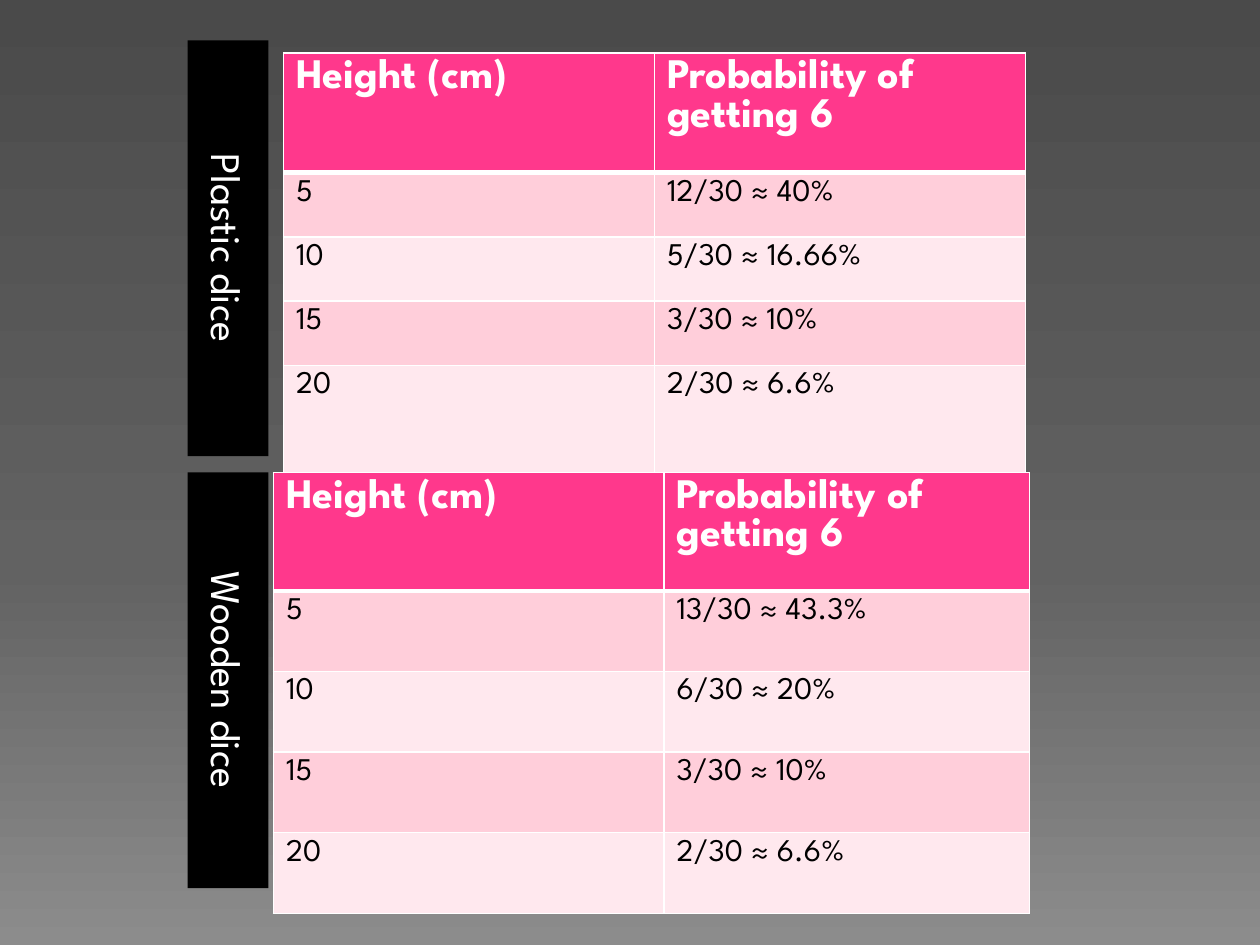
import pptx
import pptx.dml.color
import pptx.enum.shapes
import pptx.enum.text
import pptx.oxml
import pptx.oxml.ns
import pptx.util

Inches, Pt = pptx.util.Inches, pptx.util.Pt
RGB = pptx.dml.color.RGBColor

FONT = "League Spartan"
WHITE = RGB(0xFF, 0xFF, 0xFF)
BLACK = RGB(0, 0, 0)
PINK = RGB(0xFF, 0x38, 0x8C)
BANDS = [RGB(0xFF, 0xCE, 0xDA), RGB(0xFF, 0xE8, 0xEE)]
STOPS = [(0, "4A4A4A"), (60, "626262"), (100, "8C8C8C")]

HEAD = ("Height (cm)", "Probability of getting 6")
DICE = [
    dict(name="Plastic dice", top=0.32, left=2.25, table_top=0.42,
         cols=[2.945, 2.945], rows=[0.95, 0.51, 0.51, 0.51, 0.86],
         data=[("5", "12/30 ≈ 40%"), ("10", "5/30 ≈ 16.66%"),
               ("15", "3/30 ≈ 10%"), ("20", "2/30 ≈ 6.6%")]),
    dict(name="Wooden dice", top=3.75, left=2.17, table_top=3.75,
         cols=[3.1, 2.9], rows=[0.94] + [0.64] * 4,
         data=[("5", "13/30 ≈ 43.3%"), ("10", "6/30 ≈ 20%"),
               ("15", "3/30 ≈ 10%"), ("20", "2/30 ≈ 6.6%")]),
]


def write(frame, text, size=18, color=BLACK, bold=False, align=None):
    para = frame.paragraphs[0]
    para.alignment = align
    run = para.add_run()
    run.text = text
    run.font.name = FONT
    run.font.size = Pt(size)
    run.font.bold = bold
    run.font.color.rgb = color
    return para


def set_back(slide):
    """Give the slide a vertical grey gradient."""
    fill = slide.background.fill
    fill.gradient()
    fill.gradient_angle = 270
    stops = slide.element.find(".//" + pptx.oxml.ns.qn("a:gsLst"))
    for old in list(stops):
        stops.remove(old)
    for pos, color in STOPS:
        stops.append(pptx.oxml.parse_xml(
            f'<a:gs {pptx.oxml.ns.nsdecls("a")} pos="{pos * 1000}">'
            f'<a:srgbClr val="{color}"/></a:gs>'))


def add_edges(cell, row):
    """Draw white borders, thick between header and body."""
    thick = {0: "B", 1: "T"}.get(row)
    for side in "LRTB":
        width = Pt(3 if side == thick else 1)
        cell._tc.get_or_add_tcPr().append(pptx.oxml.parse_xml(
            f'<a:ln{side} {pptx.oxml.ns.nsdecls("a")} w="{width}">'
            f'<a:solidFill><a:srgbClr val="{WHITE}"/></a:solidFill>'
            f'</a:ln{side}>'))


def add_label(slide, name, top):
    box = slide.shapes.add_shape(
        pptx.enum.shapes.MSO_SHAPE.RECTANGLE,
        Inches(1.49), Inches(top), Inches(0.64), Inches(3.3))
    box.shadow.inherit = False
    box.fill.solid()
    box.fill.fore_color.rgb = BLACK
    box.line.fill.background()
    frame = box.text_frame
    frame.word_wrap = True
    frame.vertical_anchor = pptx.enum.text.MSO_ANCHOR.MIDDLE
    frame._txBody.bodyPr.set("vert", "vert")
    para = write(frame, name, size=24, color=WHITE,
                 align=pptx.enum.text.PP_ALIGN.CENTER)
    para.space_before = Pt(4.8)


def add_grid(slide, left, top, cols, rows, data):
    table = slide.shapes.add_table(
        len(rows), len(cols), Inches(left), Inches(top),
        Inches(sum(cols)), Inches(sum(rows))).table
    for col, width in zip(table.columns, cols):
        col.width = Inches(width)
    for row, height in zip(table.rows, rows):
        row.height = Inches(height)
    for r, texts in enumerate([HEAD] + data):
        for c, text in enumerate(texts):
            cell = table.cell(r, c)
            add_edges(cell, r)
            cell.fill.solid()
            if r == 0:
                cell.fill.fore_color.rgb = PINK
                write(cell.text_frame, text, size=24, color=WHITE, bold=True)
            else:
                cell.fill.fore_color.rgb = BANDS[(r - 1) % 2]
                write(cell.text_frame, text)


def main():
    deck = pptx.Presentation()
    deck.slide_width, deck.slide_height = Inches(10), Inches(7.5)
    slide = deck.slides.add_slide(deck.slide_layouts[6])
    set_back(slide)
    for die in DICE:
        add_label(slide, die["name"], die["top"])
    for die in DICE:
        add_grid(slide, die["left"], die["table_top"],
                 die["cols"], die["rows"], die["data"])
    deck.save("out.pptx")


if __name__ == "__main__":
    main()
